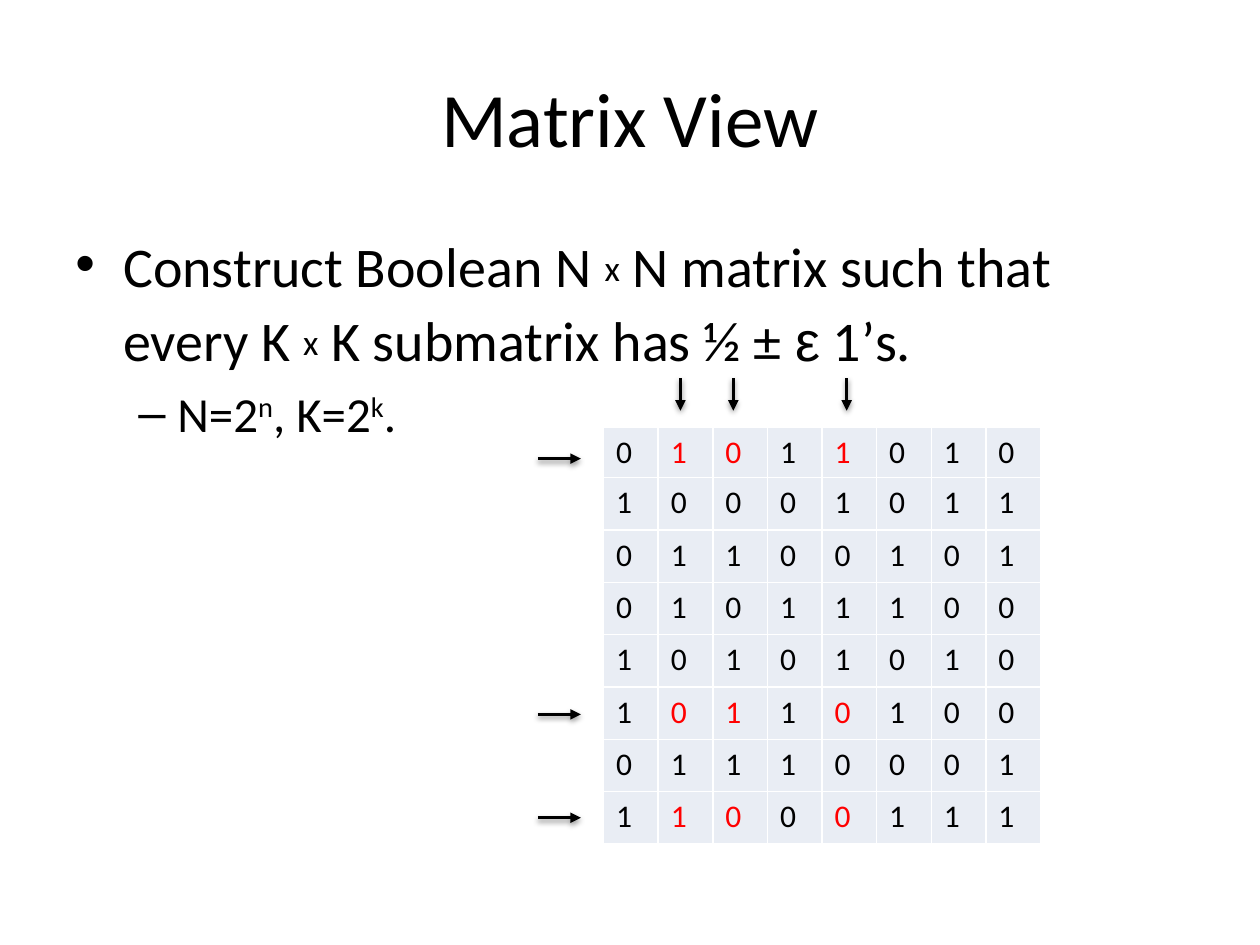
from lxml import etree
from pptx import Presentation
from pptx.dml.color import RGBColor
from pptx.enum import shapes, text
from pptx.oxml import ns
from pptx.util import Inches, Pt

BLACK = RGBColor(0x00, 0x00, 0x00)
RED = RGBColor(0xFF, 0x00, 0x00)
WHITE = RGBColor(0xFF, 0xFF, 0xFF)
CELL_FILL = RGBColor(0xE9, 0xED, 0xF4)
FONT = "Calibri"

MATRIX = ["01011010", "10001011", "01100101", "01011100",
          "10101010", "10110100", "01110001", "11000111"]
PICKED_ROWS = {0, 5, 7}
PICKED_COLUMNS = {1, 2, 4}

# Each span: text, size, baseline shift in percent, font
CLAIM = [("Construct Boolean N ", 32, 0, FONT), ("x", 35, 10, FONT),
         (" N matrix such that every K ", 32, 0, FONT), ("x", 35, 10, FONT),
         (" K submatrix has ½ ± ", 32, 0, FONT), ("ε", 32, 0, "Arial"),
         (" 1’s.", 32, 0, FONT)]
SIZES = [("N=2", 28, 0, FONT), ("n", 28, 30, FONT), (", K=2", 28, 0, FONT),
         ("k", 28, 30, FONT), (".", 28, 0, FONT)]


def add_xml(parent, tag, **attributes):
    return etree.SubElement(parent, ns.qn(tag), attributes)


def add_title(page, left, top, width, height):
    title = page.shapes.title
    title.left, title.top, title.width, title.height = left, top, width, height
    title.text_frame.text = "Matrix View"
    title.text_frame.vertical_anchor = text.MSO_ANCHOR.MIDDLE
    para = title.text_frame.paragraphs[0]
    para.alignment = text.PP_ALIGN.CENTER
    para.font.name, para.font.size = FONT, Pt(44)
    para.font.color.rgb = BLACK


def write_bullet(para, spans, bullet, indent, hanging, level=0):
    para.level = level
    para.space_before = Pt(0.2 * spans[0][1])
    para.font.color.rgb = BLACK
    properties = para._p.get_or_add_pPr()
    properties.set("marL", str(indent))
    properties.set("indent", str(-hanging))
    mark_font = etree.Element(ns.qn("a:buFont"), typeface="Arial")
    mark = etree.Element(ns.qn("a:buChar"), char=bullet)
    defaults = properties.find(ns.qn("a:defRPr"))
    defaults.addprevious(mark_font)
    defaults.addprevious(mark)
    for words, size, shift, font in spans:
        span = para.add_run()
        span.text = words
        span.font.size, span.font.name = Pt(size), font
        if shift:
            span._r.get_or_add_rPr().set("baseline", str(shift * 1000))


def add_body(page, left, top, width, height):
    frame = page.shapes.add_textbox(left, top, width, height).text_frame
    frame.word_wrap = True
    write_bullet(frame.paragraphs[0], CLAIM, "•", Inches(0.38), Inches(0.38))
    write_bullet(frame.add_paragraph(), SIZES, "–", Inches(0.81), Inches(0.31), 1)


def set_borders(cell):
    properties = cell._tc.get_or_add_tcPr()
    for position, side in enumerate(("a:lnL", "a:lnR", "a:lnT", "a:lnB")):
        line = etree.Element(ns.qn(side), w=str(Pt(1)))
        add_xml(add_xml(line, "a:solidFill"), "a:srgbClr", val=str(WHITE))
        properties.insert(position, line)


def add_matrix(page, left, top, width, height):
    count = len(MATRIX)
    table = page.shapes.add_table(count, count, left, top, width, height).table
    table.first_row = table.horz_banding = False
    for column in table.columns:
        column.width = width // count
    # The first row is slightly lower; the others share the rest
    first_height = Inches(0.4)
    for r, digits in enumerate(MATRIX):
        table.rows[r].height = (height - first_height) // (count - 1) if r else first_height
        for c, digit in enumerate(digits):
            cell = table.cell(r, c)
            cell.text = digit
            cell.fill.solid()
            cell.fill.fore_color.rgb = CELL_FILL
            set_borders(cell)
            picked = r in PICKED_ROWS and c in PICKED_COLUMNS
            font = cell.text_frame.paragraphs[0].font
            font.name, font.size = FONT, Pt(18)
            font.color.rgb = RED if picked else BLACK


def add_arrow(page, x1, y1, x2, y2):
    arrow = page.shapes.add_connector(
        shapes.MSO_CONNECTOR.STRAIGHT, Inches(x1), Inches(y1), Inches(x2), Inches(y2))
    arrow.line.color.rgb = BLACK
    arrow.line.width = Pt(2)
    add_xml(arrow.line._get_or_add_ln(), "a:tailEnd", type="triangle")
    # Soft shadow straight below
    effects = add_xml(arrow._element.spPr, "a:effectLst")
    shadow = add_xml(effects, "a:outerShdw", blurRad=str(Pt(3.1)), dist=str(Pt(1.6)),
                     dir="5400000", rotWithShape="0")
    color = add_xml(shadow, "a:srgbClr", val=str(BLACK))
    add_xml(color, "a:alpha", val="38000")


def add_selection_arrows(page):
    for x in (5.4, 5.82, 6.72):
        add_arrow(page, x, 3, x, 3.26)
    for y in (3.64, 5.67, 6.49):
        add_arrow(page, 4.27, y, 4.61, y)


def main():
    deck = Presentation()
    deck.slide_width, deck.slide_height = Inches(10), Inches(7.5)
    page = deck.slides.add_slide(deck.slide_layouts[5])
    add_title(page, Inches(0.5), Inches(0.3), Inches(9), Inches(1.25))
    add_body(page, Inches(0.5), Inches(1.75), Inches(9), Inches(4.95))
    add_matrix(page, Inches(4.79), Inches(3.39), Inches(3.47), Inches(3.31))
    add_selection_arrows(page)
    deck.save("out.pptx")


if __name__ == "__main__":
    main()
